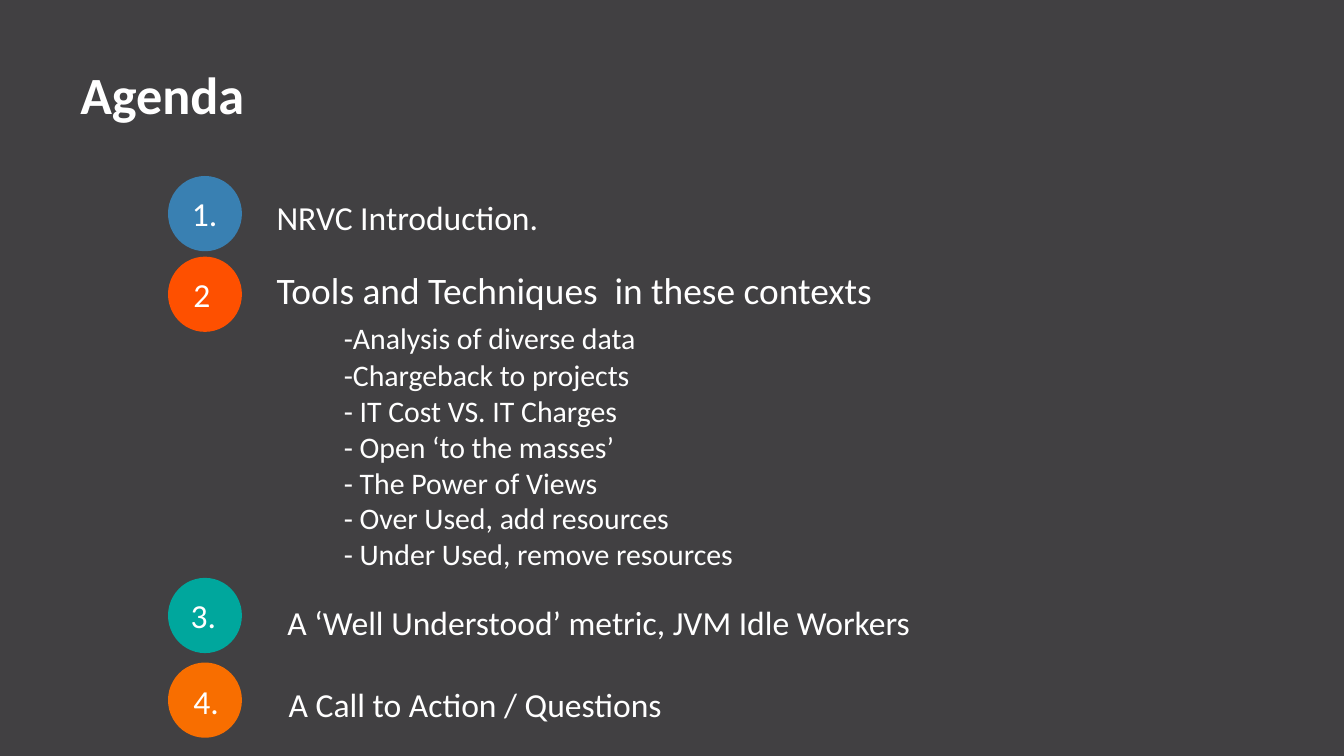
from pptx import Presentation
from pptx.dml.color import RGBColor
from pptx.enum.shapes import MSO_SHAPE
from pptx.enum.text import MSO_ANCHOR
from pptx.util import Inches, Pt

OVAL = MSO_SHAPE.OVAL
MIDDLE = MSO_ANCHOR.MIDDLE

FONT = "Calibri"
WHITE = RGBColor(0xFF, 0xFF, 0xFF)
CHARCOAL = RGBColor(0x41, 0x40, 0x42)
BLUE = RGBColor(0x39, 0x80, 0xB2)
RED_ORANGE = RGBColor(0xFE, 0x50, 0x00)
TEAL = RGBColor(0x00, 0xA7, 0x9D)
ORANGE = RGBColor(0xF8, 0x6E, 0x00)

# Colour, top, then label with its left, top and width
BADGES = [
    (BLUE, 1.31, "1.", 1.33, 1.39, 0.39),
    (RED_ORANGE, 1.91, "2", 1.34, 1.99, 0.33),
    (TEAL, 4.3, "3.", 1.32, 4.38, 0.39),
    (ORANGE, 4.93, "4.", 1.34, 5.02, 0.39),
]

# Text, left, top, width, height
TOPICS = [
    ("NRVC Introduction.", 1.96, 1.36, 2.2, 0.46),
    ("A ‘Well Understood’ metric, JVM Idle Workers", 2.04, 4.37, 5.08, 0.44),
    ("A Call to Action / Questions", 2.05, 4.98, 3.01, 0.44),
]

CONTEXT_HEADING = "Tools and Techniques  in these contexts"
CONTEXTS = [
    "-Analysis of diverse data",
    "-Chargeback to projects",
    "- IT Cost VS. IT Charges",
    "- Open ‘to the masses’",
    "- The Power of Views",
    "- Over Used, add resources",
    "- Under Used, remove resources",
]


def write(paragraph, text, size, bold=False):
    paragraph.text = text
    for run in paragraph.runs:
        run.font.name = FONT
        run.font.size = Pt(size)
        run.font.bold = bold
        run.font.color.rgb = WHITE


def add_text_frame(slide, left, top, width, height, wrap=True):
    box = slide.shapes.add_textbox(
        Inches(left), Inches(top), Inches(width), Inches(height))
    box.text_frame.word_wrap = wrap
    return box.text_frame


def add_title(slide):
    text_frame = add_text_frame(slide, 0.5, 0.23, 9, 0.94)
    text_frame.vertical_anchor = MIDDLE
    write(text_frame.paragraphs[0], "Agenda", 28, bold=True)


def add_badge(slide, color, top, label, label_left, label_top, label_width):
    circle = slide.shapes.add_shape(
        OVAL, Inches(1.25), Inches(top), Inches(0.55), Inches(0.56))
    circle.shadow.inherit = False
    circle.fill.solid()
    circle.fill.fore_color.rgb = color
    circle.line.fill.background()
    text_frame = add_text_frame(
        slide, label_left, label_top, label_width, 0.4, wrap=False)
    write(text_frame.paragraphs[0], label, 18)


def add_topic(slide, text, left, top, width, height):
    text_frame = add_text_frame(slide, left, top, width, height, wrap=False)
    paragraph = text_frame.paragraphs[0]
    paragraph.line_spacing = 1.2
    write(paragraph, text, 18)


def add_contexts(slide):
    """Add the second topic with its indented list."""
    text_frame = add_text_frame(slide, 1.96, 1.87, 5.18, 2.71)
    heading = text_frame.paragraphs[0]
    heading.line_spacing = 1.2
    write(heading, CONTEXT_HEADING, 20)
    for index, context in enumerate(CONTEXTS):
        paragraph = text_frame.add_paragraph()
        paragraph._p.get_or_add_pPr().set("marL", str(Inches(0.5)))
        if index == 0:
            paragraph.space_before = Pt(4)
            paragraph.space_after = Pt(1)
        write(paragraph, context, 16)


def main():
    presentation = Presentation()
    presentation.slide_width = Inches(10)
    presentation.slide_height = presentation.slide_width * 9 // 16
    slide = presentation.slides.add_slide(presentation.slide_layouts[6])
    slide.background.fill.solid()
    slide.background.fill.fore_color.rgb = CHARCOAL

    add_title(slide)
    for badge in BADGES:
        add_badge(slide, *badge)
    add_contexts(slide)
    for topic in TOPICS:
        add_topic(slide, *topic)

    presentation.save("out.pptx")


if __name__ == "__main__":
    main()
